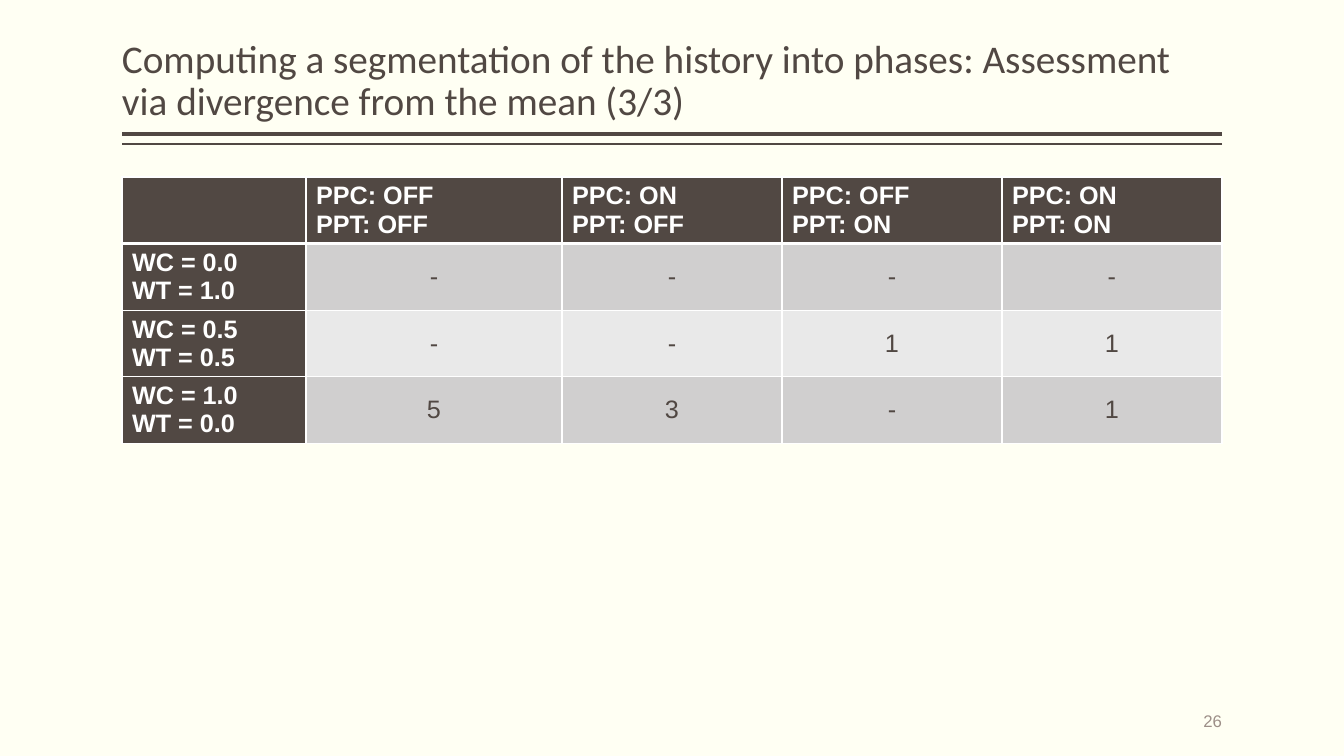
"""Build the slide on phase segmentation with its table of divergence results."""
from lxml import etree
from pptx import Presentation
from pptx.dml.color import RGBColor
from pptx.enum.shapes import MSO_CONNECTOR
from pptx.enum.text import MSO_ANCHOR, MSO_AUTO_SIZE, PP_ALIGN
from pptx.oxml.ns import qn
from pptx.util import Pt

PX = 914400 * 10 // 1008
STRAIGHT = MSO_CONNECTOR.STRAIGHT
LEFT, CENTER, RIGHT = PP_ALIGN.LEFT, PP_ALIGN.CENTER, PP_ALIGN.RIGHT
TOP, MIDDLE, BOTTOM = MSO_ANCHOR.TOP, MSO_ANCHOR.MIDDLE, MSO_ANCHOR.BOTTOM
NO_AUTOFIT = MSO_AUTO_SIZE.NONE

CREAM = RGBColor(0xFF, 0xFF, 0xF3)
BROWN = RGBColor(0x51, 0x48, 0x43)
TAUPE = RGBColor(0x9D, 0x8F, 0x88)
WHITE = RGBColor(0xFF, 0xFF, 0xFF)
BANDS = [RGBColor(0xE9, 0xE9, 0xE9), RGBColor(0xD0, 0xCF, 0xCF)]

MARGIN, CONTENT_WIDTH = 122, 1100
COLUMN_WIDTHS = [184, 256, 220, 220, 220]
ROW_HEIGHT = 66
ROWS = [
    ["", "PPC: OFF\vPPT: OFF", "PPC: ON\vPPT: OFF", "PPC: OFF\vPPT: ON", "PPC: ON\vPPT: ON"],
    ["WC = 0.0\vWT = 1.0", "-", "-", "-", "-"],
    ["WC = 0.5\vWT = 0.5", "-", "-", "1", "1"],
    ["WC = 1.0\vWT = 0.0", "5", "3", "-", "1"],
]


def format_paragraph(paragraph, font_name, size, color, alignment, bold=False):
    """Set the font and alignment of a paragraph."""
    paragraph.alignment = alignment
    font = paragraph.font
    font.name, font.size, font.bold = font_name, Pt(size), bold
    font.color.rgb = color


def add_border(cell, side, points):
    """Draw a white border on one side of a table cell."""
    properties = cell._tc.get_or_add_tcPr()
    line = etree.SubElement(properties, qn(f"a:ln{side}"), w=str(Pt(points)))
    fill = etree.SubElement(line, qn("a:solidFill"))
    etree.SubElement(fill, qn("a:srgbClr"), val=str(WHITE))


presentation = Presentation()
presentation.slide_width = 1344 * PX
presentation.slide_height = 756 * PX
slide = presentation.slides.add_slide(presentation.slide_layouts[5])
slide.background.fill.solid()
slide.background.fill.fore_color.rgb = CREAM

for y, points in [(134, 3), (144, 1)]:
    rule = slide.shapes.add_connector(
        STRAIGHT, (MARGIN + CONTENT_WIDTH) * PX, y * PX, MARGIN * PX, y * PX)
    rule.line.color.rgb = BROWN
    rule.line.width = Pt(points)
    etree.SubElement(rule._element.spPr, qn("a:effectLst"))

title = slide.shapes.title
title.left, title.top = MARGIN * PX, 8 * PX
title.width, title.height = CONTENT_WIDTH * PX, 121 * PX
title.text = ("Computing a segmentation of the history into phases: "
              "Assessment via divergence from the mean (3/3)")
title_frame = title.text_frame
title_frame.auto_size = NO_AUTOFIT
title_frame.word_wrap = True
title_frame.vertical_anchor = BOTTOM
title_frame.margin_left = title_frame.margin_right = 0
title_paragraph = title_frame.paragraphs[0]
title_paragraph.line_spacing = 0.9
format_paragraph(title_paragraph, "Calibri", 28, BROWN, LEFT)

table = slide.shapes.add_table(
    len(ROWS), len(COLUMN_WIDTHS), MARGIN * PX, 177 * PX,
    CONTENT_WIDTH * PX, len(ROWS) * ROW_HEIGHT * PX).table
table.first_col = True
for column, width in zip(table.columns, COLUMN_WIDTHS):
    column.width = width * PX
for row_index, values in enumerate(ROWS):
    table.rows[row_index].height = ROW_HEIGHT * PX
    for column_index, value in enumerate(values):
        cell = table.cell(row_index, column_index)
        is_header = row_index == 0 or column_index == 0
        cell.text = value
        cell.vertical_anchor = TOP if is_header else MIDDLE
        format_paragraph(
            cell.text_frame.paragraphs[0], "Arial", 18,
            WHITE if is_header else BROWN, LEFT if is_header else CENTER, is_header)
        add_border(cell, "L", 1)
        add_border(cell, "R", 1)
        add_border(cell, "T", 3 if row_index == 1 else 1)
        add_border(cell, "B", 3 if row_index == 0 else 1)
        cell.fill.solid()
        cell.fill.fore_color.rgb = BROWN if is_header else BANDS[row_index % 2]

page_number = slide.shapes.add_textbox(1020 * PX, 701 * PX, 202 * PX, 40 * PX)
page_frame = page_number.text_frame
page_frame.text = "26"
page_frame.word_wrap = True
page_frame.vertical_anchor = MIDDLE
page_frame.margin_left = page_frame.margin_right = 0
format_paragraph(page_frame.paragraphs[0], "Arial", 12, TAUPE, RIGHT)

presentation.save("out.pptx")
